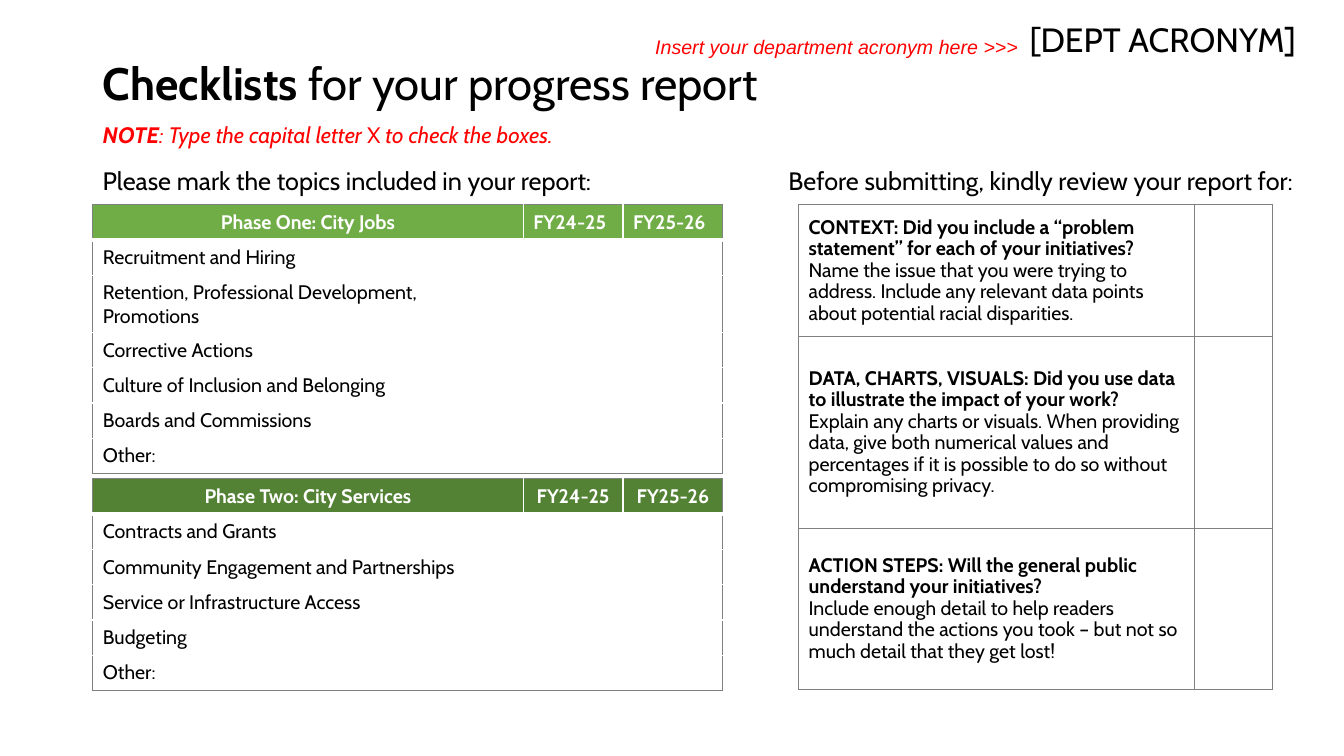
from lxml import etree
from pptx import Presentation
from pptx import util as u
from pptx.dml.color import RGBColor
from pptx.enum import text
from pptx.oxml.ns import qn

BLACK, WHITE, RED, GREY = "000000", "FFFFFF", "FF0000", "808080"
LEFT, CENTER, RIGHT = text.PP_ALIGN.LEFT, text.PP_ALIGN.CENTER, text.PP_ALIGN.RIGHT
TOP, MIDDLE = text.MSO_ANCHOR.TOP, text.MSO_ANCHOR.MIDDLE

# Runs are (text, format changes)
TITLE = [("Checklists", {"bold": True}), (" for your progress report", {})]
TITLE_BOX = (0.92, 0.58, 11.5, 0.54)

# Position, runs, font, paragraph format, anchor
LABELS = [
    ((5.97, 0.21, 4.23, 0.64), [("Insert your department acronym here >>>", {"italic": True})],
     {"name": "Arial", "size": 14, "color": RED},
     {"alignment": RIGHT, "line_spacing": 1.15, "space_after": u.Pt(12)}, TOP, 0.1),
    ((9.23, 0, 3.72, 0.82), [("[DEPT ACRONYM]", {})],
     {"size": 24}, {"alignment": RIGHT, "line_spacing": 0.9}, MIDDLE, 0.05),
    ((7.72, 1.65, 5.29, 0.35), [("Before submitting, kindly review your report for:", {})],
     {"size": 18}, {"line_spacing": 0.8}, TOP, 0.05),
    ((0.92, 1.65, 6.25, 0.35), [("Please mark the topics included in your report:", {})],
     {"size": 18}, {"line_spacing": 0.8}, TOP, 0.05),
    ((0.92, 1.15, 5.17, 0.37),
     [("NOTE", {"bold": True, "italic": True}),
      (": Type the capital letter ", {"italic": True}),
      ("X", {}),
      (" to check the boxes.", {"italic": True})],
     {"size": 16, "color": RED}, {}, TOP, 0.05),
]

YEARS = ["FY24-25", "FY25-26"]
# Top, header, header colour, alignment of the years, topics
PHASES = [
    (4.75, "Phase Two: City Services", "548235", CENTER,
     ["Contracts and Grants", "Community Engagement and Partnerships",
      "Service or Infrastructure Access", "Budgeting", "Other:"]),
    (2.03, "Phase One: City Jobs", "70AD47", LEFT,
     ["Recruitment and Hiring", "Retention, Professional Development, Promotions",
      "Corrective Actions", "Culture of Inclusion and Belonging",
      "Boards and Commissions", "Other:"]),
]
PHASE_COLUMNS = [4.27, 0.99, 0.99]
PHASE_ROW = 0.35

REVIEW = [
    ("CONTEXT: Did you include a “problem statement” for each of your initiatives?",
     "Name the issue that you were trying to address. Include any relevant data points "
     "about potential racial disparities."),
    ("DATA, CHARTS, VISUALS: Did you use data to illustrate the impact of your work?",
     "Explain any charts or visuals. When providing data, give both numerical values and "
     "percentages if it is possible to do so without compromising privacy."),
    ("ACTION STEPS: Will the general public understand your initiatives?",
     "Include enough detail to help readers understand the actions you took – but not so "
     "much detail that they get lost!"),
]
REVIEW_COLUMNS = [3.93, 0.77]
REVIEW_ROWS = [1.31, 1.9, 1.6]


def rgb(color):
    return RGBColor.from_string(color)


def set_all(target, values):
    for name, value in values.items():
        setattr(target, name, value)


def write(paragraph, runs, font, layout):
    set_all(paragraph, {"alignment": LEFT, **layout})
    for words, changes in runs:
        run = paragraph.add_run()
        run.text = words
        style = {"name": "Cabin", "size": 14, "color": BLACK,
                 "bold": False, "italic": False, **font, **changes}
        run.font.color.rgb = rgb(style.pop("color"))
        style["size"] = u.Pt(style["size"])
        set_all(run.font, style)


def place(shape, box):
    set_all(shape, dict(zip(("left", "top", "width", "height"), map(u.Inches, box))))


def set_borders(cell, borders):
    """Draw the borders, given as {side: (colour, points)}, with sides L, R, T, B."""
    properties = cell._tc.get_or_add_tcPr()
    for position, side in enumerate("LRTB"):
        color, points = borders[side]
        line = etree.Element(qn(f"a:ln{side}"), w=str(u.Pt(points)))
        fill = etree.SubElement(line, qn("a:solidFill"))
        etree.SubElement(fill, qn("a:srgbClr"), val=color)
        properties.insert(position, line)


def add_table(slide, left, top, columns, rows):
    frame = slide.shapes.add_table(len(rows), len(columns), u.Inches(left), u.Inches(top),
                                   u.Inches(sum(columns)), u.Inches(sum(rows)))
    table = frame.table
    table.first_row = table.horz_banding = False
    for column, width in zip(table.columns, columns):
        column.width = u.Inches(width)
    for row, height in zip(table.rows, rows):
        row.height = u.Inches(height)
    for cell in table.iter_cells():
        cell.vertical_anchor = MIDDLE
        cell.fill.background()
    return table


def add_phase(slide, top, header, color, year_alignment, topics):
    table = add_table(slide, 0.92, top, PHASE_COLUMNS, [PHASE_ROW] * (len(topics) + 1))
    contents = [[header, *YEARS]] + [[topic, "", ""] for topic in topics]
    last_row, last_column = len(topics), len(PHASE_COLUMNS) - 1
    for r, row in enumerate(contents):
        for c, words in enumerate(row):
            cell = table.cell(r, c)
            paragraph = cell.text_frame.paragraphs[0]
            if r == 0:
                cell.fill.solid()
                cell.fill.fore_color.rgb = rgb(color)
                alignment = year_alignment if c else CENTER
                write(paragraph, [(words, {})], {"color": WHITE, "bold": True},
                      {"alignment": alignment})
            elif words:
                write(paragraph, [(words, {})], {}, {})
            else:
                etree.SubElement(paragraph._p, qn("a:endParaRPr"), sz="1400")
            set_borders(cell, {
                "L": (WHITE if c else GREY, 1),
                "R": (GREY if c == last_column else WHITE, 1),
                "T": (GREY if r == 0 else WHITE, 3 if r == 1 else 1),
                "B": (GREY if r == last_row else WHITE, 3 if r == 0 else 1),
            })


def add_review(slide):
    table = add_table(slide, 7.92, 2.03, REVIEW_COLUMNS, REVIEW_ROWS)
    for r, (question, advice) in enumerate(REVIEW):
        frame = table.cell(r, 0).text_frame
        write(frame.paragraphs[0], [(question, {"bold": True})], {}, {"line_spacing": 0.9})
        write(frame.add_paragraph(), [(advice, {})], {}, {"line_spacing": 0.9})
    for cell in table.iter_cells():
        set_borders(cell, dict.fromkeys("LRTB", (GREY, 1)))


def main():
    presentation = Presentation()
    presentation.slide_width, presentation.slide_height = u.Inches(13.33), u.Inches(7.5)
    slide = presentation.slides.add_slide(presentation.slide_layouts[5])

    title = slide.shapes.title
    place(title, TITLE_BOX)
    set_all(title.text_frame, {"vertical_anchor": MIDDLE, "word_wrap": True,
                               "auto_size": text.MSO_AUTO_SIZE.NONE})
    write(title.text_frame.paragraphs[0], TITLE, {"size": 32.4}, {"line_spacing": 0.9})

    for box, runs, font, layout, anchor, inset in LABELS:
        frame = slide.shapes.add_textbox(*map(u.Inches, box)).text_frame
        set_all(frame, {"word_wrap": True, "vertical_anchor": anchor,
                        "margin_top": u.Inches(inset), "margin_bottom": u.Inches(inset)})
        write(frame.paragraphs[0], runs, font, layout)

    for phase in PHASES:
        add_phase(slide, *phase)
    add_review(slide)
    presentation.save("out.pptx")


if __name__ == "__main__":
    main()
